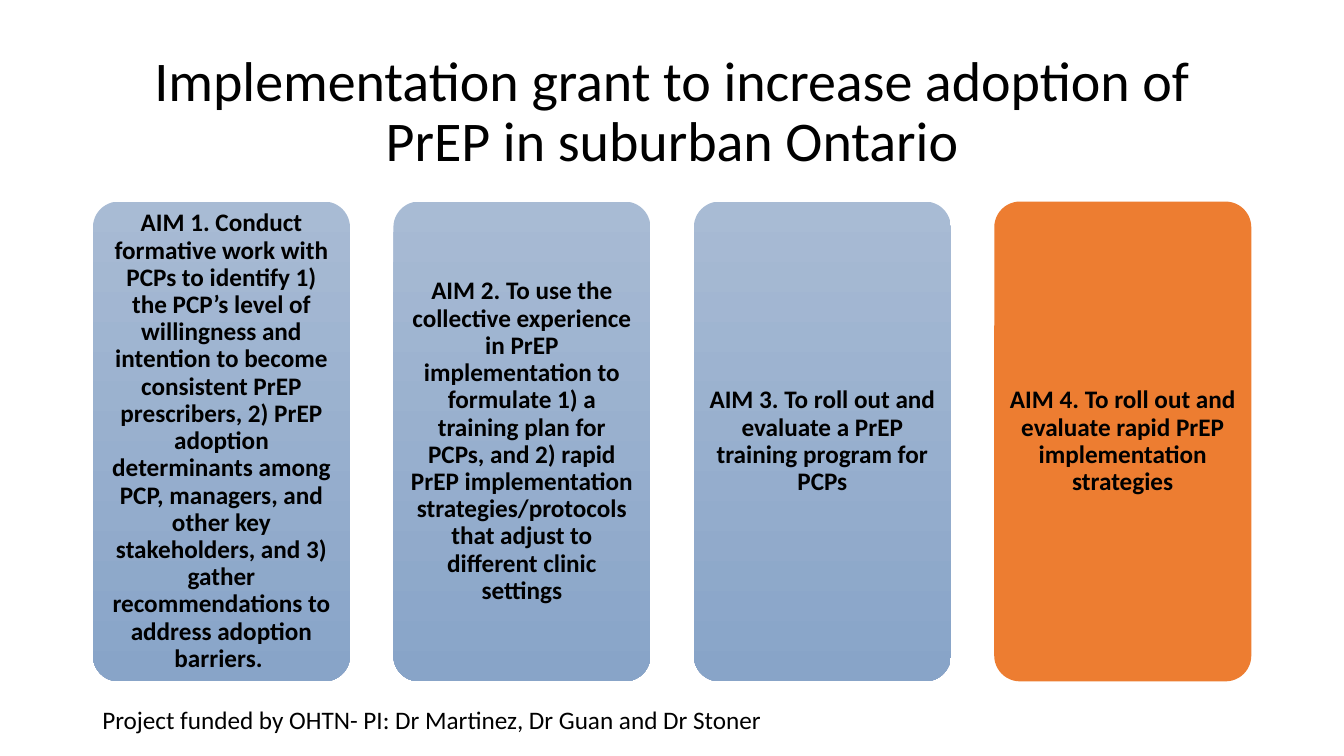
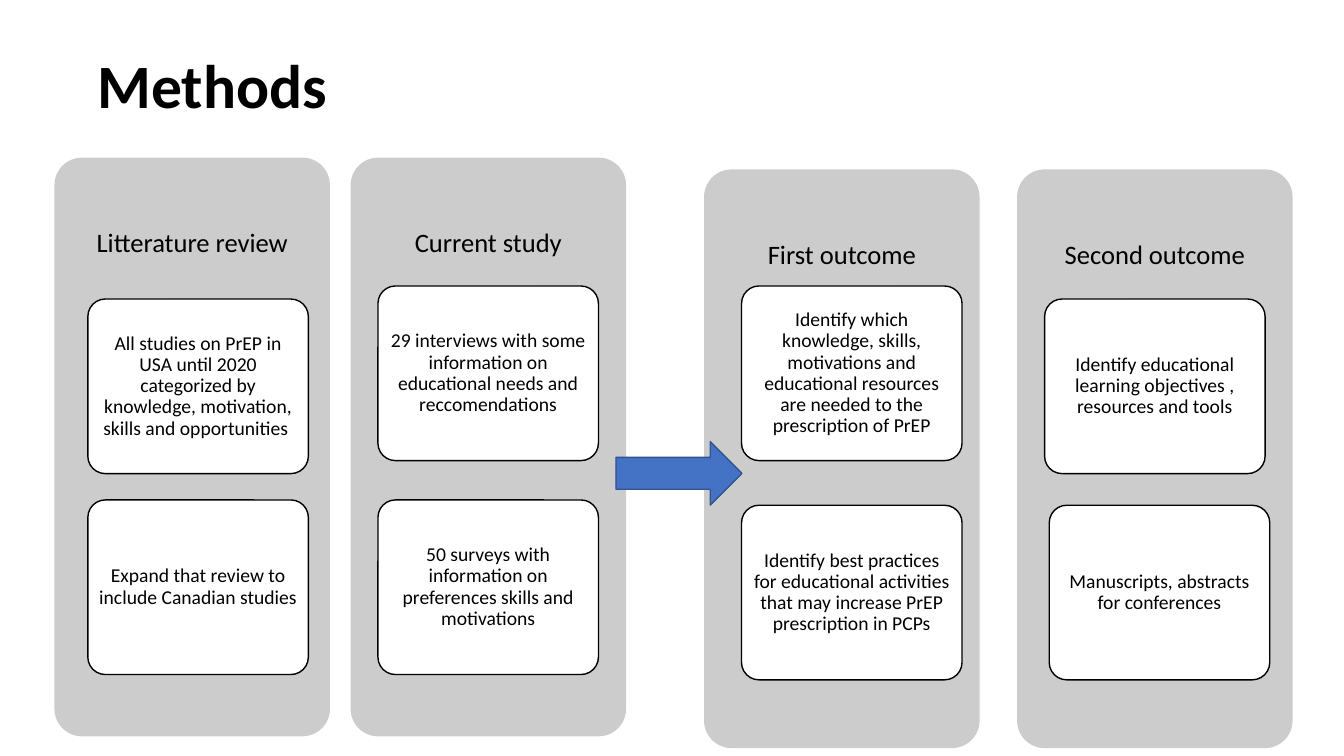
from dataclasses import dataclass

from pptx import Presentation
from pptx import util as u
from pptx.dml import color
from pptx.enum import shapes, text

Pt = u.Pt


def rgb(value):
    return color.RGBColor.from_string(value)


@dataclass(frozen=True)
class Theme:
    font: str = "Calibri"
    ink: str = "000000"
    paper: str = "FFFFFF"
    panel: str = "CCCCCC"
    aim_top: str = "A8BBD4"
    aim_bottom: str = "88A4C8"
    highlight: str = "ED7D31"
    arrow: str = "4472C4"
    arrow_edge: str = "325491"
    title_size: int = 40
    heading_size: int = 44
    body_size: int = 18
    panel_size: int = 19
    card_size: int = 14
    spacing: float = 0.9
    corner: float = 0.1


class Board:
    """Holds the deck, its style and the slide being drawn."""

    def __init__(self, theme):
        self.theme = theme
        self.deck = Presentation()
        self.deck.slide_width, self.deck.slide_height = Pt(960), Pt(540)
        self.page = None

    def new_page(self):
        self.page = self.deck.slides.add_slide(self.deck.slide_layouts[6])

    def set_text(self, shape, words, size, bold=False, centered=True,
                 insets=(7.2, 3.6, 7.2, 3.6), middle=True, spacing=None):
        frame = shape.text_frame
        frame.text = words
        frame.word_wrap = True
        frame.vertical_anchor = text.MSO_ANCHOR.MIDDLE if middle else text.MSO_ANCHOR.TOP
        (frame.margin_left, frame.margin_top,
         frame.margin_right, frame.margin_bottom) = map(Pt, insets)
        para = frame.paragraphs[0]
        para.alignment = text.PP_ALIGN.CENTER if centered else text.PP_ALIGN.LEFT
        para.line_spacing = spacing or self.theme.spacing
        for span in para.runs:
            span.font.name = self.theme.font
            span.font.size = Pt(size)
            span.font.bold = bold
            span.font.color.rgb = rgb(self.theme.ink)

    def label(self, at, words, size, **style):
        box = self.page.shapes.add_textbox(*map(Pt, at))
        self.set_text(box, words, size, **style)

    def shape(self, kind, at, fill, edge=None):
        shape = self.page.shapes.add_shape(kind, *map(Pt, at))
        shape.shadow.inherit = False
        shape.fill.solid()
        shape.fill.fore_color.rgb = rgb(fill)
        if edge:
            shape.line.color.rgb = rgb(edge)
            shape.line.width = Pt(1)
        else:
            shape.line.fill.background()
        return shape

    def rounded(self, at, words, size, fill, insets, edge=None, bold=False):
        box = self.shape(shapes.MSO_SHAPE.ROUNDED_RECTANGLE, at, fill, edge)
        box.adjustments[0] = self.theme.corner
        # A rounded shape already insets its text by part of the corner radius
        built_in = 0.29 * self.theme.corner * min(at[2:])
        insets = [max(0, inset - built_in) for inset in insets]
        self.set_text(box, words, size, bold=bold, insets=insets)
        return box

    def aim(self, at, words, highlighted):
        theme = self.theme
        box = self.rounded(at, words, theme.body_size, theme.highlight,
                           (10.8,) * 4, bold=True)
        if not highlighted:
            box.fill.gradient()
            box.fill.gradient_angle = 270
            for stop, shade in zip(box.fill.gradient_stops,
                                   (theme.aim_top, theme.aim_bottom)):
                stop.color.rgb = rgb(shade)

    def panel(self, left, top, words):
        self.rounded((left, top, 196.8, 413.4), words, self.theme.panel_size,
                     self.theme.panel, (5.8, 5.8, 5.8, 295.2))

    def card(self, left, top, words):
        self.rounded((left, top, 157.5, 124.7), words, self.theme.card_size,
                     self.theme.paper, (6.4, 5.8, 6.4, 5.8), edge=self.theme.ink)

    def arrow(self, at):
        self.shape(shapes.MSO_SHAPE.RIGHT_ARROW, at,
                   self.theme.arrow, self.theme.arrow_edge)


AIMS = [
    "AIM 1. Conduct formative work with PCPs to identify 1) the PCP’s level of "
    "willingness and intention to become consistent PrEP prescribers, 2) PrEP "
    "adoption determinants among PCP, managers, and other key stakeholders, and "
    "3) gather recommendations to address adoption barriers. ",
    "AIM 2. To use the collective experience in PrEP implementation to formulate "
    "1) a training plan for PCPs, and 2) rapid PrEP implementation "
    "strategies/protocols that adjust to different clinic settings",
    "AIM 3. To roll out and evaluate a PrEP training program for PCPs",
    "AIM 4. To roll out and evaluate rapid PrEP implementation strategies",
]

# Each column: heading, panel left and top, then cards as left, top, words
COLUMNS = [
    ("Litterature review", 38.9, 112.6, [
        (62.8, 213.6, "All studies on PrEP in USA until 2020 categorized by "
                      "knowledge, motivation, skills and opportunities "),
        (62.8, 357.1, "Expand that review to include Canadian studies")]),
    ("Current study", 250.4, 112.6, [
        (270, 204.3, "29 interviews with some information on educational needs "
                     "and reccomendations"),
        (270, 357.1, "50 surveys with information on preferences skills and "
                     "motivations")]),
    ("First outcome", 502.9, 121, [
        (529.7, 204.3, "Identify which knowledge, skills, motivations and "
                       "educational resources are needed to the prescription of PrEP"),
        (529.7, 360.9, "Identify best practices for educational activities that "
                       "may increase PrEP prescription in PCPs")]),
    ("Second outcome", 726.5, 121, [
        (746.2, 213.6, "Identify educational learning objectives , resources and tools"),
        (749.5, 360.9, "Manuscripts, abstracts for conferences")]),
]


def draw_aims(board):
    board.new_page()
    board.label((66, 28.8, 828, 104.4),
                "Implementation grant to increase adoption of PrEP in suburban Ontario",
                board.theme.title_size)
    # Four equal columns, the last one highlighted
    for index, words in enumerate(AIMS):
        board.aim((66.4 + 214.6 * index, 144, 183.6, 342.7), words,
                  highlighted=index == len(AIMS) - 1)
    board.label((66, 499.7, 498, 29),
                "Project funded by OHTN- PI: Dr Martinez, Dr Guan and Dr Stoner",
                board.theme.body_size, centered=False, middle=False, spacing=1.0)


def draw_methods(board):
    board.new_page()
    # Panels lie below the arrow, cards above it
    for heading, left, top, _ in COLUMNS:
        board.panel(left, top, heading)
    board.arrow((440, 315.4, 90, 45.4))
    for *_, cards in COLUMNS:
        for left, top, words in cards:
            board.card(left, top, words)
    board.label((62.6, 10.8, 828, 104.4), "Methods",
                board.theme.heading_size, bold=True, centered=False)


def main():
    board = Board(Theme())
    draw_aims(board)
    draw_methods(board)
    board.deck.save("out.pptx")


if __name__ == "__main__":
    main()
